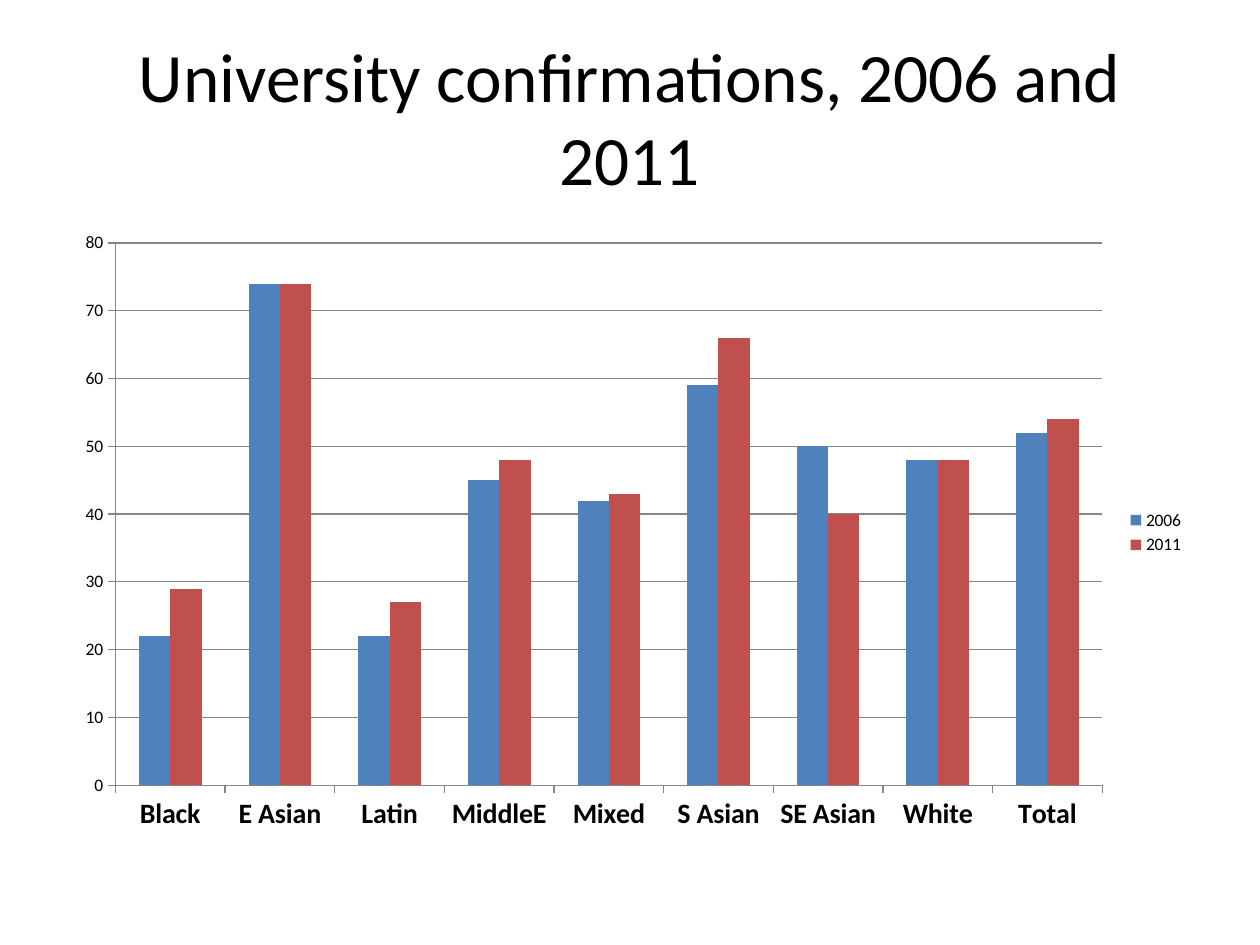
from dataclasses import dataclass

from pptx import Presentation
from pptx.chart.data import CategoryChartData as ChartData
from pptx.dml.color import RGBColor as Rgb
from pptx.enum.chart import XL_CHART_TYPE as ChartType
from pptx.enum.chart import XL_LEGEND_POSITION as LegendPosition
from pptx.enum.chart import XL_TICK_MARK as TickMark
from pptx.enum.text import MSO_ANCHOR as Anchor
from pptx.enum.text import PP_ALIGN as Align
from pptx.slide import Slide
from pptx.util import Cm, Pt


@dataclass(frozen=True)
class Theme:
    font: str = "Calibri"
    ink: Rgb = Rgb(0, 0, 0)
    rule: Rgb = Rgb(0x86, 0x86, 0x86)
    title_size: float = 39.6
    label_size: float = 10
    group_size: float = 16


@dataclass(frozen=True)
class Box:
    left: float
    top: float
    width: float
    height: float

    def lengths(self) -> tuple[Cm, Cm, Cm, Cm]:
        return Cm(self.left), Cm(self.top), Cm(self.width), Cm(self.height)


@dataclass(frozen=True)
class Year:
    name: str
    rates: tuple[int, ...]
    color: Rgb


THEME = Theme()
GROUPS = ("Black", "E Asian", "Latin", "MiddleE", "Mixed",
          "S Asian", "SE Asian", "White", "Total")
YEARS = (
    Year("2006", (22, 74, 22, 45, 42, 59, 50, 48, 52), Rgb(0x4F, 0x81, 0xBD)),
    Year("2011", (29, 74, 27, 48, 43, 66, 40, 48, 54), Rgb(0xC0, 0x50, 0x4D)),
)


def style_font(font, size: float, bold: bool = False) -> None:
    font.name = THEME.font
    font.size = Pt(size)
    font.bold = bold
    font.color.rgb = THEME.ink


def add_text(slide: Slide, text: str, box: Box, *, size: float,
             align: Align = Align.CENTER, anchor: Anchor = Anchor.MIDDLE) -> None:
    frame = slide.shapes.add_textbox(*box.lengths()).text_frame
    frame.word_wrap = True
    frame.vertical_anchor = anchor
    paragraph = frame.paragraphs[0]
    paragraph.alignment = align
    run = paragraph.add_run()
    run.text = text
    style_font(run.font, size)


def add_rates_chart(slide: Slide, groups: tuple[str, ...],
                    years: tuple[Year, ...], box: Box) -> None:
    rates = ChartData()
    rates.categories = groups
    for year in years:
        rates.add_series(year.name, year.rates)
    chart = slide.shapes.add_chart(
        ChartType.COLUMN_CLUSTERED, *box.lengths(), rates).chart
    chart.has_title = False
    style_font(chart.font, THEME.label_size)

    chart.has_legend = True
    chart.legend.position = LegendPosition.RIGHT
    chart.legend.include_in_layout = False

    plot = chart.plots[0]
    plot.gap_width = 150
    plot.overlap = 0
    plot.vary_by_categories = False
    for series, year in zip(plot.series, years):
        series.format.fill.solid()
        series.format.fill.fore_color.rgb = year.color
        series.invert_if_negative = False

    group_axis, rate_axis = chart.category_axis, chart.value_axis
    style_font(group_axis.tick_labels.font, THEME.group_size, bold=True)
    rate_axis.minimum_scale, rate_axis.maximum_scale = 0, 80
    rate_axis.major_unit = 10
    rate_axis.has_major_gridlines = True
    for axis in (group_axis, rate_axis):
        axis.major_tick_mark = TickMark.OUTSIDE
        axis.minor_tick_mark = TickMark.NONE
    for ruled in (group_axis, rate_axis, rate_axis.major_gridlines):
        ruled.format.line.color.rgb = THEME.rule
        ruled.format.line.width = Pt(0.75)


def main() -> None:
    deck = Presentation()
    deck.slide_width, deck.slide_height = Cm(25.4), Cm(19.05)
    slide = deck.slides.add_slide(deck.slide_layouts[6])
    add_text(slide, "University confirmations, 2006 and 2011",
             Box(1.27, 0.76, 22.86, 3.18), size=THEME.title_size)
    add_rates_chart(slide, GROUPS, YEARS, Box(1.27, 4.45, 22.86, 12.57))
    deck.save("out.pptx")


if __name__ == "__main__":
    main()
